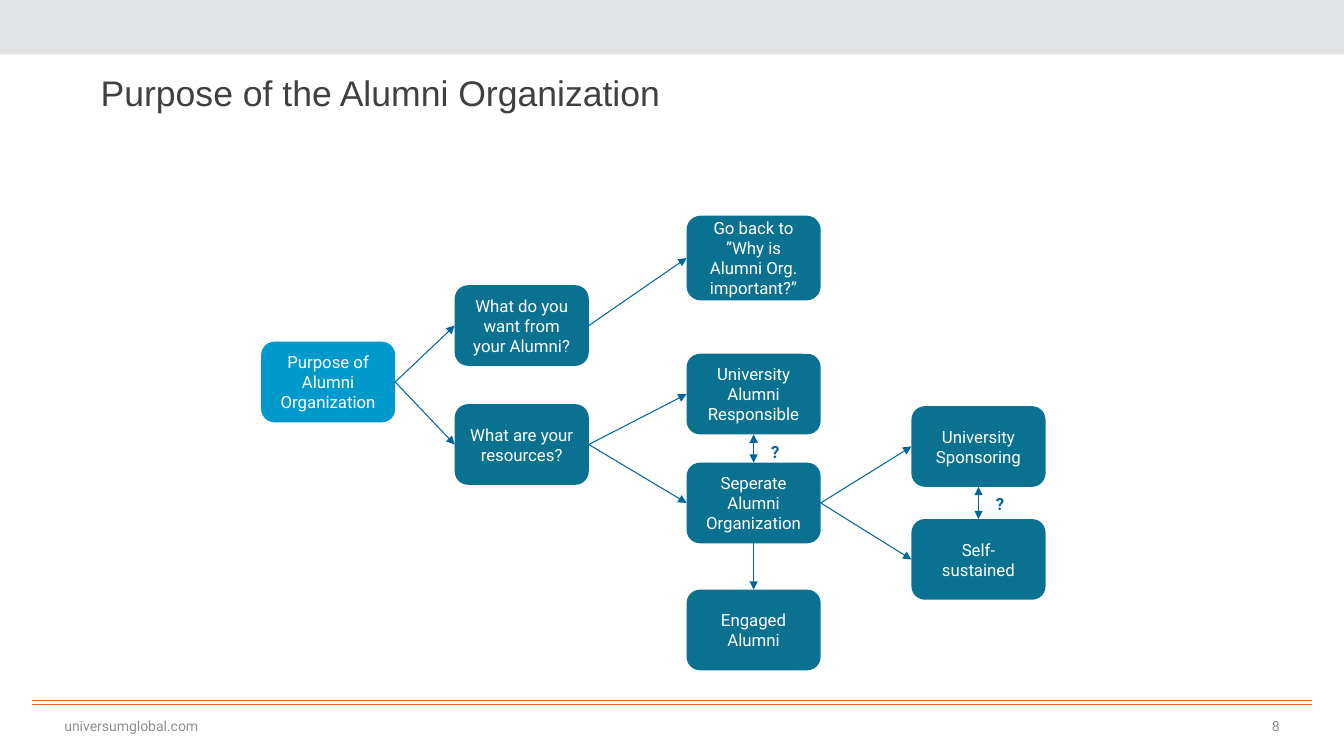
from lxml import etree
from pptx import Presentation
from pptx.dml.color import RGBColor
from pptx.enum.shapes import MSO_CONNECTOR, MSO_SHAPE
from pptx.enum.text import MSO_ANCHOR, PP_ALIGN
from pptx.oxml.ns import qn
from pptx.util import Inches, Pt

STRAIGHT = MSO_CONNECTOR.STRAIGHT
RECTANGLE, ROUNDED = MSO_SHAPE.RECTANGLE, MSO_SHAPE.ROUNDED_RECTANGLE
MIDDLE = MSO_ANCHOR.MIDDLE
LEFT, CENTER, RIGHT = PP_ALIGN.LEFT, PP_ALIGN.CENTER, PP_ALIGN.RIGHT

BAND_GREY = RGBColor(0xE2, 0xE3, 0xE4)
TITLE_GREY = RGBColor(0x41, 0x40, 0x41)
FOOTER_GREY = RGBColor(0x91, 0x90, 0x90)
ORANGE = RGBColor(0xF1, 0x61, 0x2A)
ROOT_BLUE = RGBColor(0x00, 0x99, 0xCC)
TEAL = RGBColor(0x0B, 0x71, 0x91)
ARROW_BLUE = RGBColor(0x00, 0x66, 0x99)
WHITE = RGBColor(0xFF, 0xFF, 0xFF)

SLIDE_WIDTH, SLIDE_HEIGHT = 13.33, 7.5
NODE_WIDTH, NODE_HEIGHT = 1.33, 0.8
# Connection sites of a rounded rectangle
TOP_SITE, LEFT_SITE, BOTTOM_SITE, RIGHT_SITE = range(4)

# Node: wording, left and top within the tree, height, fill
NODES = {
    "purpose": ("Purpose of Alumni Organization", 0, 1.25, NODE_HEIGHT, ROOT_BLUE),
    "wants": ("What do you want from your Alumni?", 1.92, 0.69, NODE_HEIGHT, TEAL),
    "resources": ("What are your resources?", 1.92, 1.87, NODE_HEIGHT, TEAL),
    "go back": ("Go back to ”Why is Alumni Org. important?”", 4.22, 0, 0.84, TEAL),
    "responsible": ("University Alumni Responsible", 4.22, 1.37, NODE_HEIGHT, TEAL),
    "separate": ("Seperate Alumni Organization", 4.22, 2.45, NODE_HEIGHT, TEAL),
    "engaged": ("Engaged Alumni", 4.22, 3.71, NODE_HEIGHT, TEAL),
    "sponsoring": ("University Sponsoring", 6.45, 1.89, NODE_HEIGHT, TEAL),
    "self-sustained": ("Self-sustained", 6.45, 3.01, NODE_HEIGHT, TEAL),
}
BRANCHES = [
    ("purpose", "wants"), ("purpose", "resources"), ("wants", "go back"),
    ("resources", "responsible"), ("resources", "separate"),
    ("separate", "sponsoring"), ("separate", "self-sustained"),
]
ALTERNATIVES = [("responsible", "separate"), ("sponsoring", "self-sustained")]


def write(shape, wording, size, color, font="Roboto", align=LEFT, bold=False):
    frame = shape.text_frame
    frame.word_wrap = True
    frame.vertical_anchor = MIDDLE
    frame.margin_left = frame.margin_right = Inches(0.1)
    frame.margin_top = frame.margin_bottom = Inches(0.05)
    paragraph = frame.paragraphs[0]
    paragraph.text = wording
    paragraph.alignment = align
    paragraph.font.name = font
    paragraph.font.size = Pt(size)
    paragraph.font.bold = bold
    paragraph.font.color.rgb = color


def add_label(slide, box, wording, size, color, **style):
    label = slide.shapes.add_textbox(*map(Inches, box))
    write(label, wording, size, color, **style)


def add_block(slide, preset, box, fill):
    block = slide.shapes.add_shape(preset, *map(Inches, box))
    block.shadow.inherit = False
    block.fill.solid()
    block.fill.fore_color.rgb = fill
    block.line.fill.background()
    return block


def add_line(slide, ends, color, weight):
    line = slide.shapes.add_connector(STRAIGHT, *map(Inches, ends))
    line.line.color.rgb = color
    line.line.width = Pt(weight)
    etree.SubElement(line._element.spPr, qn("a:effectLst"))
    return line


def add_arrow(slide, source, source_site, target, target_site, both_ways=False):
    arrow = add_line(slide, (0, 0, 0, 0), ARROW_BLUE, 0.75)
    arrow.begin_connect(source, source_site)
    arrow.end_connect(target, target_site)
    outline = arrow._element.spPr.find(qn("a:ln"))
    for tip in ("a:headEnd", "a:tailEnd") if both_ways else ("a:tailEnd",):
        etree.SubElement(outline, qn(tip), type="triangle")


def add_header(slide, left, top, width, height):
    # Grey band with the title below it
    add_block(slide, RECTANGLE, (left, top, width, 0.54), BAND_GREY)
    add_label(slide, (left + 0.9, top + 0.61, width - 1.79, height - 0.61),
              "Purpose of the Alumni Organization", 25.4, TITLE_GREY, font="Arial")


def add_footer(slide, left, top, width, height):
    # Double rule, web address and page number
    for rule_top in (top, top + 0.04):
        add_line(slide, (left, rule_top, left + width, rule_top), ORANGE, 0.25)
    text_top, text_height = top + 0.11, height - 0.11
    add_label(slide, (left + 0.22, text_top, 3.5, text_height),
              "universumglobal.com", 10, FOOTER_GREY)
    add_label(slide, (left + width - 2.75, text_top, 2.53, text_height),
              "8", 10, FOOTER_GREY, align=RIGHT)


def add_decision_tree(slide, left, top):
    # Nodes
    nodes = {}
    for name, (wording, x, y, height, fill) in NODES.items():
        node = add_block(slide, ROUNDED, (left + x, top + y, NODE_WIDTH, height), fill)
        write(node, wording, 12, WHITE, align=CENTER)
        nodes[name] = node

    # Arrows
    for source, target in BRANCHES:
        add_arrow(slide, nodes[source], RIGHT_SITE, nodes[target], LEFT_SITE)
    add_arrow(slide, nodes["separate"], BOTTOM_SITE, nodes["engaged"], TOP_SITE)

    # Open choices, each marked by a question mark beside a double arrow
    for upper, lower in ALTERNATIVES:
        add_arrow(slide, nodes[upper], BOTTOM_SITE, nodes[lower], TOP_SITE, both_ways=True)
        _, x, y, height, _ = NODES[upper]
        add_label(slide, (left + x + 0.74, top + y + height + 0.02, 0.3, 0.3),
                  "?", 12, ARROW_BLUE, bold=True)


def main():
    presentation = Presentation()
    presentation.slide_width = Inches(SLIDE_WIDTH)
    presentation.slide_height = Inches(SLIDE_HEIGHT)
    slide = presentation.slides.add_slide(presentation.slide_layouts[6])
    add_header(slide, 0, 0, SLIDE_WIDTH, 1.23)
    add_footer(slide, 0.32, 6.95, 12.69, 0.4)
    add_decision_tree(slide, 2.59, 2.14)
    presentation.save("out.pptx")


if __name__ == "__main__":
    main()
